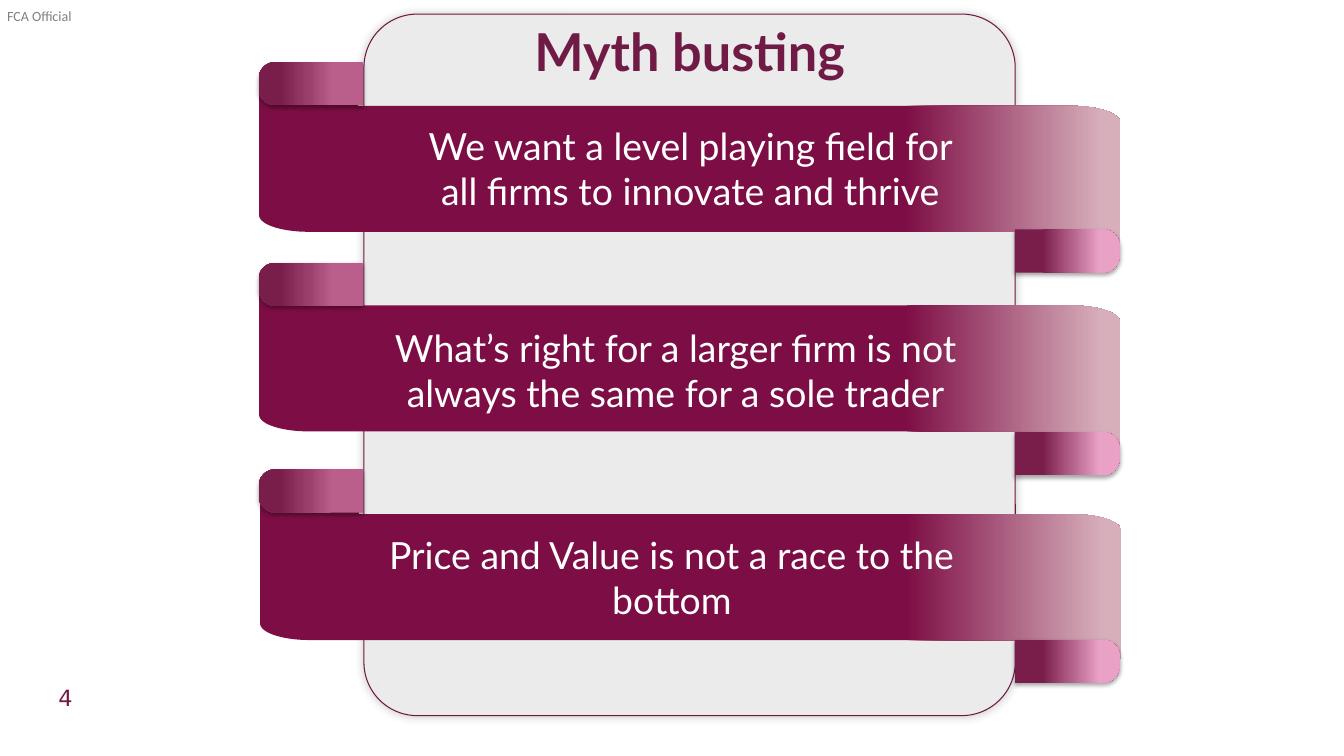
from dataclasses import dataclass
from math import cos, radians, sin

from lxml.etree import SubElement
from pptx import Presentation
from pptx.dml.color import RGBColor
from pptx.enum.shapes import MSO_SHAPE
from pptx.enum.text import MSO_ANCHOR, MSO_AUTO_SIZE, PP_ALIGN
from pptx.oxml.ns import qn
from pptx.util import Inches, Pt

BLACK = RGBColor(0x00, 0x00, 0x00)
WHITE = RGBColor(0xFF, 0xFF, 0xFF)
PANEL_GREY = RGBColor(0xEB, 0xEB, 0xEB)
PANEL_EDGE = RGBColor(0x70, 0x18, 0x43)
PLUM = RGBColor(0x70, 0x1B, 0x45)
BURGUNDY = RGBColor(0x7D, 0x0E, 0x45)
PALE_ROSE = RGBColor(0xD7, 0xAF, 0xBB)
ROLL_DARK = RGBColor(0x79, 0x1D, 0x4B)

RIBBON_STOPS = [(75, BURGUNDY), (98, PALE_ROSE)]
RIGHT_ROLL_STOPS = [(26, ROLL_DARK), (53, RGBColor(0xB1, 0x5F, 0x88)),
                    (81, RGBColor(0xE9, 0xA1, 0xC5))]
LEFT_ROLL_STOPS = [(29, RGBColor(0xBA, 0x5E, 0x8C)),
                   (53, RGBColor(0x9A, 0x3E, 0x6C)), (80, ROLL_DARK)]


@dataclass
class Shadow:
    opacity: int
    blur: float
    distance: float
    direction: int


@dataclass
class Ribbon:
    left: float
    top: float
    left_roll_top: float
    right_roll_top: float
    text_left: float
    text_top: float
    text_width: float
    text: str


PANEL_SHADOW = Shadow(20, 6, 0, 225)
ROLL_SHADOW = Shadow(35, 3.1, 1.8, 90)

RIBBONS = [
    Ribbon(2.57, 0.72, 0.31, 1.97, 3.97, 1.17, 5.76,
           "We want a level playing field for all firms to innovate and thrive"),
    Ribbon(2.57, 2.7, 2.3, 3.98, 3.34, 3.18, 6.73,
           "What’s right for a larger firm is not always the same for a sole trader"),
    Ribbon(2.58, 4.77, 4.35, 6.04, 3.3, 5.23, 6.73,
           "Price and Value is not a race to the bottom"),
]


def set_gradient(shape, stops: list[tuple[int, RGBColor]], angle: int) -> None:
    shape.fill.gradient()
    gradient = shape._element.spPr.find(qn("a:gradFill"))
    stop_list = gradient.find(qn("a:gsLst"))
    for old_stop in list(stop_list):
        stop_list.remove(old_stop)
    for position, color in stops:
        stop = SubElement(stop_list, qn("a:gs"), pos=str(position * 1000))
        SubElement(stop, qn("a:srgbClr"), val=str(color))
    gradient.find(qn("a:lin")).set("ang", str(angle * 60000))


def set_shadow(shape, shadow: Shadow) -> None:
    shape.shadow.inherit = False
    effects = shape._element.spPr.find(qn("a:effectLst"))
    outer = SubElement(effects, qn("a:outerShdw"), blurRad=str(Pt(shadow.blur)),
                       dist=str(Pt(shadow.distance)),
                       dir=str(shadow.direction * 60000), algn="ctr",
                       rotWithShape="0")
    color = SubElement(outer, qn("a:srgbClr"), val=str(BLACK))
    SubElement(color, qn("a:alpha"), val=str(shadow.opacity * 1000))


def write_text(box, text: str, size: float, font: str, color: RGBColor,
               frame_format: dict, align=PP_ALIGN.CENTER, bold: bool = False):
    frame = box.text_frame
    for name, value in {"word_wrap": True, **frame_format}.items():
        setattr(frame, name, value)
    para = frame.paragraphs[0]
    para.alignment = align
    span = para.add_run()
    span.text = text
    for name, value in {"size": Pt(size), "name": font, "bold": bold}.items():
        setattr(span.font, name, value)
    span.font.color.rgb = color
    return span


def add_text(page, at: tuple[float, ...], *args, **kwargs):
    box = page.shapes.add_textbox(*map(Inches, at))
    return write_text(box, *args, **kwargs)


def arc(center_x: float, center_y: float, start: int, end: int,
        radius_x: float = 0.49, radius_y: float = 0.165) -> list[tuple[float, float]]:
    step = 6 if end > start else -6
    return [(center_x + radius_x * cos(radians(angle)),
             center_y + radius_y * sin(radians(angle)))
            for angle in range(start, end + step, step)]


def add_ribbon_body(page, left: float, top: float) -> None:
    outline = [
        *arc(0.49, 0.165, 180, 360), (0.98, 0.33),
        *arc(8.05, 0.495, 270, 360),
        *arc(8.05, 1.745, 0, 180), (7.56, 1.58),
        *arc(0.49, 1.415, 90, 180),
    ]
    points = [(Inches(left + x), Inches(top + y)) for x, y in outline]
    builder = page.shapes.build_freeform(*points[0])
    builder.add_line_segments(points[1:], close=True)
    body = builder.convert_to_shape()
    body.shadow.inherit = False
    body.line.fill.background()
    set_gradient(body, RIBBON_STOPS, 0)


def add_roll(page, left: float, top: float, rotation: int,
             stops: list[tuple[int, RGBColor]]) -> None:
    roll = page.shapes.add_shape(MSO_SHAPE.ROUND_2_SAME_RECTANGLE, Inches(left),
                                 Inches(top), Inches(0.43), Inches(1.04))
    roll.adjustments[0] = 0.386
    roll.adjustments[1] = 0
    roll.rotation = rotation
    roll.line.fill.background()
    set_gradient(roll, stops, 270)
    set_shadow(roll, ROLL_SHADOW)


def add_ribbon(page, ribbon: Ribbon) -> None:
    add_ribbon_body(page, ribbon.left, ribbon.top)
    add_roll(page, 10.37, ribbon.right_roll_top, 90, RIGHT_ROLL_STOPS)
    add_roll(page, 2.87, ribbon.left_roll_top, 270, LEFT_ROLL_STOPS)
    add_text(page, (ribbon.text_left, ribbon.text_top, ribbon.text_width, 1),
             ribbon.text, 26.7, "Lato", WHITE,
             {"auto_size": MSO_AUTO_SIZE.SHAPE_TO_FIT_TEXT})


def add_panel(page) -> None:
    panel = page.shapes.add_shape(MSO_SHAPE.ROUNDED_RECTANGLE, Inches(3.61),
                                  Inches(0.14), Inches(6.46), Inches(6.96))
    panel.adjustments[0] = 0.082
    panel.fill.solid()
    panel.fill.fore_color.rgb = PANEL_GREY
    panel.line.color.rgb = PANEL_EDGE
    panel.line.width = Pt(0.75)
    set_shadow(panel, PANEL_SHADOW)
    # Place the panel behind the title
    page.shapes.title._element.addprevious(panel._element)


def main() -> None:
    deck = Presentation()
    deck.slide_width, deck.slide_height = Inches(13.33), Inches(7.5)
    page = deck.slides.add_slide(deck.slide_layouts[5])

    # Panel and title
    add_panel(page)
    title = page.shapes.title
    title.left, title.top = Inches(3.77), Inches(0.14)
    title.width, title.height = Inches(6.14), Inches(0.73)
    write_text(title, "Myth busting", 37.3, "Lato", PLUM,
               {"vertical_anchor": MSO_ANCHOR.TOP,
                "auto_size": MSO_AUTO_SIZE.SHAPE_TO_FIT_TEXT}, bold=True)

    # Classification label and page number
    no_margins = {f"margin_{side}": 0 for side in ("left", "top", "right", "bottom")}
    label = add_text(page, (0.07, 0.07, 0.68, 0.17), "FCA Official", 10, "Calibri",
                     BLACK, {**no_margins, "word_wrap": False}, PP_ALIGN.LEFT)
    label_color = label._r.rPr.find(".//" + qn("a:srgbClr"))
    SubElement(label_color, qn("a:alpha"), val="50000")
    add_text(page, (0.58, 6.72, 3, 0.4), "4", 16, "DejaVu Sans", PLUM,
             {"margin_left": 0, "vertical_anchor": MSO_ANCHOR.MIDDLE}, PP_ALIGN.LEFT)

    # Ribbons
    for ribbon in RIBBONS:
        add_ribbon(page, ribbon)

    deck.save("out.pptx")


if __name__ == "__main__":
    main()
